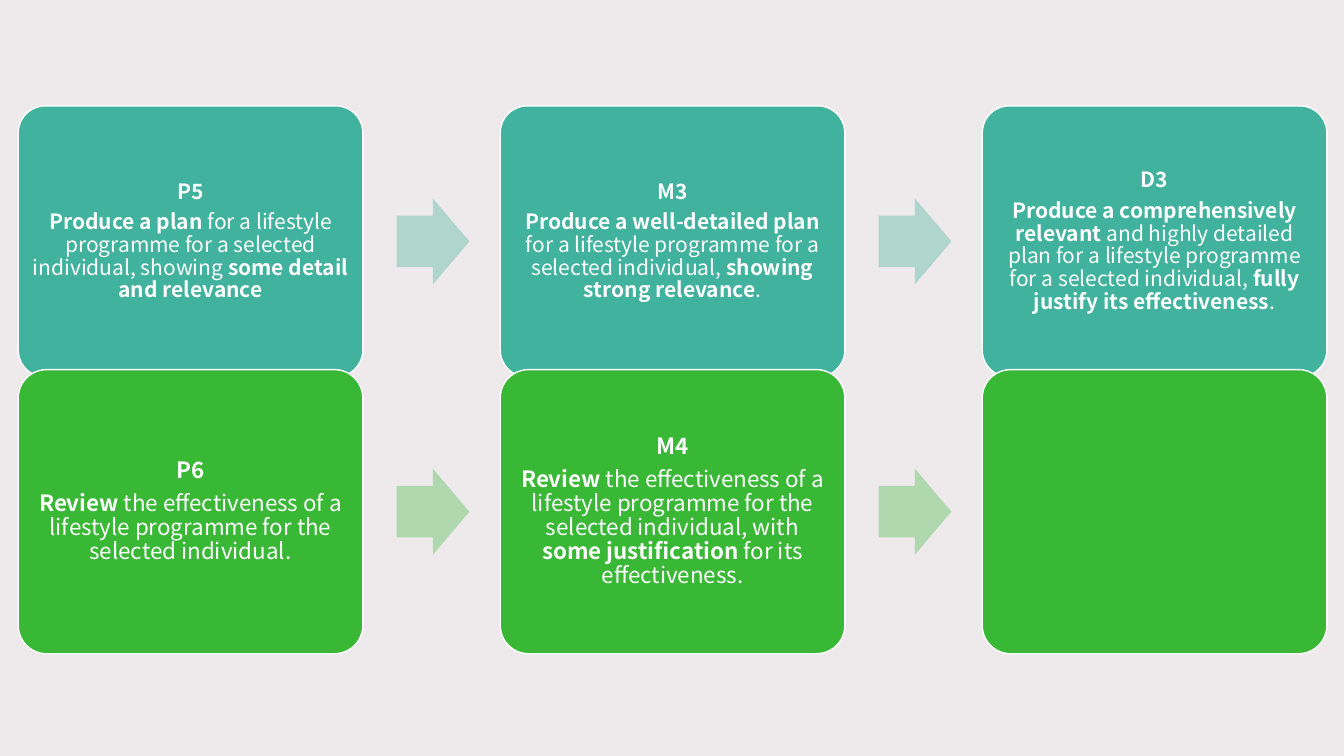
from pptx import Presentation
from pptx.dml.color import RGBColor
from pptx.enum.shapes import MSO_SHAPE
from pptx.enum.text import MSO_ANCHOR, PP_ALIGN
from pptx.util import Pt

ROUNDED = MSO_SHAPE.ROUNDED_RECTANGLE
ARROW = MSO_SHAPE.RIGHT_ARROW
MIDDLE = MSO_ANCHOR.MIDDLE
CENTER = PP_ALIGN.CENTER

FONT = "Noto Sans CJK JP"
COLORS = {
    "background": "EEE9EA",
    "teal": "40B29D",
    "pale teal": "B0D5CC",
    "green": "39B836",
    "pale green": "AFD8AE",
    "white": "FFFFFF",
}
LEFT, STEP, CARD_WIDTH = 13, 344.3, 246.2
ARROW_OFFSET, ARROW_WIDTH, ARROW_HEIGHT = 270.3, 52, 61.2

PLAN_CARDS = [
    ("P5", [("Produce a plan ", True),
            ("for a lifestyle programme for a selected individual, showing ", False),
            ("some detail and relevance", True)]),
    ("M3", [("Produce a well-detailed plan ", True),
            ("for a lifestyle programme for a selected individual, ", False),
            ("showing strong relevance", True), (".", False)]),
    ("D3", [("Produce a comprehensively relevant ", True),
            ("and highly detailed plan for a lifestyle programme "
             "for a selected individual, ", False),
            ("fully justify its effectiveness", True), (".", False)]),
]
REVIEW_CARDS = [
    ("P6", [("Review", True),
            (" the effectiveness of a lifestyle programme "
             "for the selected individual.", False)]),
    ("M4", [("Review", True),
            (" the effectiveness of a lifestyle programme "
             "for the selected individual, with ", False),
            ("some justification ", True), ("for its effectiveness.", False)]),
    None,
]


def color(name):
    """Return the named colour."""
    return RGBColor.from_string(COLORS[name])


def add_box(page, kind, left, top, width, height, fill):
    """Add a flat filled shape without an outline."""
    box = page.shapes.add_shape(kind, Pt(left), Pt(top), Pt(width), Pt(height))
    box.shadow.inherit = False
    box.fill.solid()
    box.fill.fore_color.rgb = color(fill)
    box.line.fill.background()
    return box


def add_span(para, text, size, bold):
    """Add a white run to a paragraph."""
    span = para.add_run()
    span.text = text
    span.font.name = FONT
    span.font.size = Pt(size)
    span.font.bold = bold
    span.font.color.rgb = color("white")


def write_card(box, code, spans, size, inset):
    """Write the criterion code and its description in a card."""
    frame = box.text_frame
    frame.word_wrap = True
    frame.vertical_anchor = MIDDLE
    frame.margin_left = frame.margin_right = Pt(inset)
    frame.margin_top = frame.margin_bottom = Pt(inset)
    heading, description = frame.paragraphs[0], frame.add_paragraph()
    for para, parts in ((heading, [(code, True)]), (description, spans)):
        para.alignment = CENTER
        para.line_spacing = Pt(round(size * 1.08, 1))
        para.space_after = Pt(5.75)
        for text, bold in parts:
            add_span(para, text, size, bold)


def add_row(page, cards, top, height, fill, size, inset):
    """Add a row of cards joined by block arrows."""
    for index, card in enumerate(cards):
        left = LEFT + index * STEP
        box = add_box(page, ROUNDED, left, top, CARD_WIDTH, height, fill)
        box.adjustments[0] = 0.1
        box.line.color.rgb = color("white")
        box.line.width = Pt(1)
        if card:
            write_card(box, *card, size, inset)
        if index < len(cards) - 1:
            arrow = add_box(page, ARROW, left + ARROW_OFFSET,
                            top + (height - ARROW_HEIGHT) / 2,
                            ARROW_WIDTH, ARROW_HEIGHT, "pale " + fill)
            arrow.adjustments[0] = 0.6
            arrow.adjustments[1] = 0.5


def main():
    """Build the slide of assessment criteria."""
    deck = Presentation()
    deck.slide_width, deck.slide_height = Pt(960), Pt(540)
    page = deck.slides.add_slide(deck.slide_layouts[6])
    page.background.fill.solid()
    page.background.fill.fore_color.rgb = color("background")
    add_row(page, PLAN_CARDS, 75.6, 193.7, "teal", 15, 4.3)
    add_row(page, REVIEW_CARDS, 264, 203, "green", 16, 5)
    deck.save("out.pptx")


if __name__ == "__main__":
    main()
